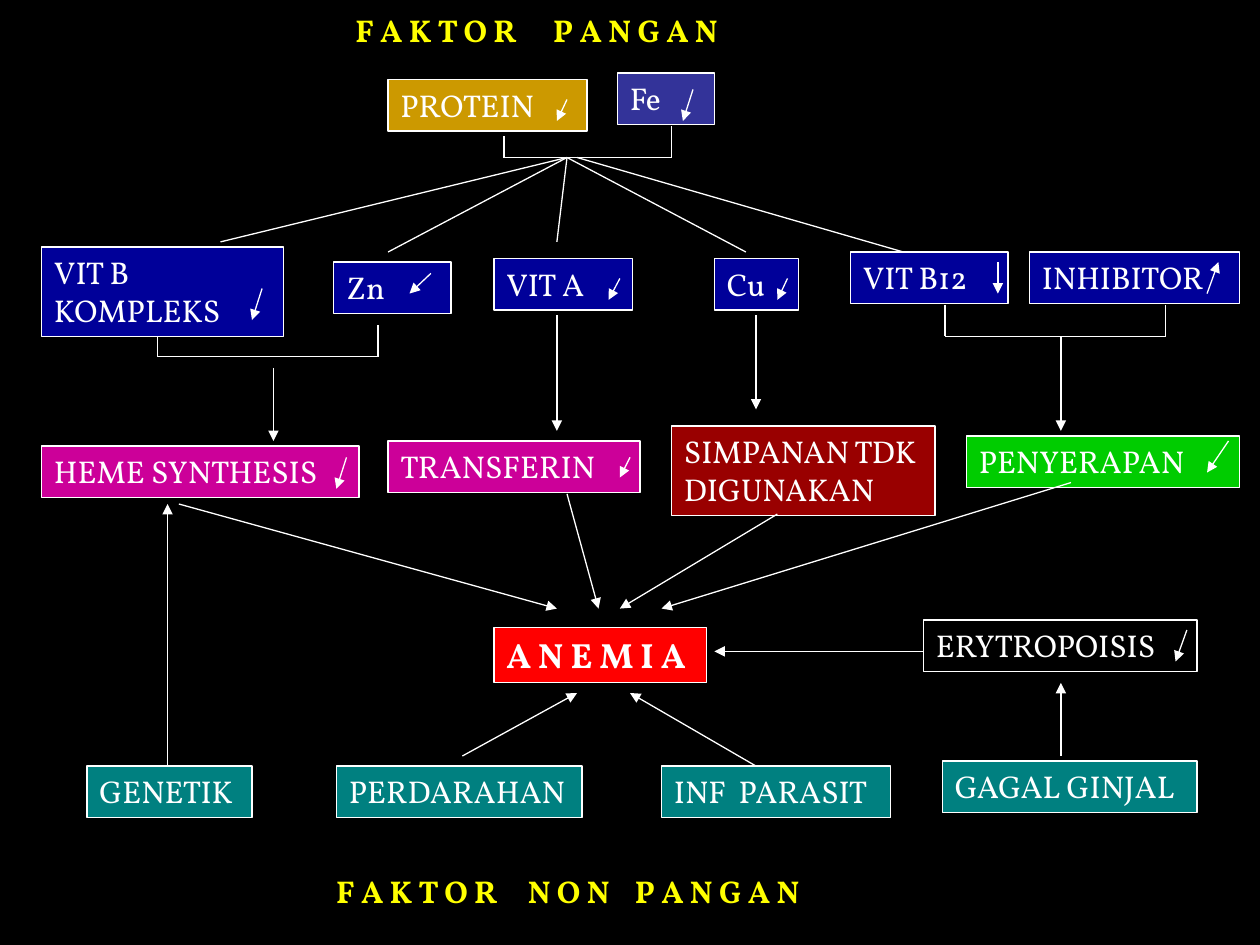
"""Build a slide that charts the dietary and other causes of anemia."""
from dataclasses import dataclass

from lxml import etree
from pptx import Presentation
from pptx.dml.color import RGBColor
from pptx.enum import shapes, text
from pptx.oxml import ns
from pptx.util import Inches, Pt

FONT, WHITE, YELLOW, BLACK = "Vollkorn", "FFFFFF", "FFFF00", "000000"
NAVY, PINK, TEAL = "000099", "CC0099", "008080"


@dataclass
class Box:
    label: str
    left: float
    top: float
    width: float
    fill: str | None
    height: float = 0.41
    wrap: bool = True
    size: int = 18
    bold: bool = False


@dataclass
class Line:
    x1: float
    y1: float
    x2: float
    y2: float
    head: bool = True


@dataclass
class Fork:
    left: float
    top1: float
    right: float
    top2: float
    base: float


BOXES = [
    Box("PROTEIN", 3.08, 0.63, 1.58, "CC9900"),
    Box("Fe", 4.9, 0.58, 0.77, "333399"),
    Box("VIT B KOMPLEKS", 0.33, 1.96, 1.92, NAVY, 0.71),
    Box("Zn", 2.65, 2.08, 0.93, NAVY),
    Box("VIT A", 3.92, 2.05, 1.1, NAVY),
    Box("Cu", 5.67, 2.05, 0.67, NAVY, wrap=False),
    Box("VIT B12", 6.75, 2, 1.25, NAVY),
    Box("INHIBITOR", 8.17, 2, 1.67, NAVY),
    Box("HEME SYNTHESIS", 0.33, 3.54, 2.52, PINK),
    Box("TRANSFERIN", 3.08, 3.5, 2, PINK),
    Box("SIMPANAN TDK\nDIGUNAKAN", 5.33, 3.38, 2.09, "990000", 0.71, False),
    Box("PENYERAPAN", 7.67, 3.46, 2.17, "00CC00"),
    Box("A N E M I A", 3.92, 4.98, 1.69, "FF0000", 0.44, False, 20, True),
    Box("ERYTROPOISIS", 7.33, 4.92, 2.17, None),
    Box("GENETIK", 0.69, 6.08, 1.31, TEAL, wrap=False),
    Box("PERDARAHAN", 2.67, 6.08, 1.95, TEAL, wrap=False),
    Box("INF  PARASIT", 5.25, 6.08, 1.82, TEAL, wrap=False),
    Box("GAGAL GINJAL", 7.48, 6.04, 2.02, TEAL, wrap=False),
]
TRENDS = [
    Line(4.5, 0.79, 4.42, 0.96), Line(5.5, 0.71, 5.42, 0.96),
    Line(2.08, 2.29, 2, 2.54), Line(3.42, 2.17, 3.25, 2.33),
    Line(4.92, 2.21, 4.83, 2.38), Line(6.25, 2.21, 6.17, 2.38),
    Line(7.92, 2.08, 7.92, 2.33), Line(9.58, 2.33, 9.67, 2.08),
    Line(2.75, 3.63, 2.67, 3.88), Line(5, 3.63, 4.92, 3.79),
    Line(9.75, 3.5, 9.58, 3.75), Line(9.42, 5, 9.33, 5.25),
]
RAYS = [
    Line(4.5, 1.25, 1.75, 1.92, False), Line(4.5, 1.25, 3.08, 2, False),
    Line(4.5, 1.25, 4.42, 1.92, False), Line(4.5, 1.25, 5.92, 2, False),
    Line(4.58, 1.25, 7.17, 2, False),
]
FLOWS = [
    Line(2.17, 2.92, 2.17, 3.5), Line(4.42, 2.5, 4.42, 3.42),
    Line(6, 2.5, 6, 3.25), Line(8.42, 2.67, 8.42, 3.42),
    Line(1.42, 4, 4.42, 4.83), Line(4.5, 3.92, 4.75, 4.83),
    Line(6.17, 4.08, 4.92, 4.83), Line(8.5, 3.83, 5.25, 4.83),
    Line(1.33, 6.08, 1.33, 4), Line(3.67, 6, 4.58, 5.5),
    Line(6, 6.08, 5, 5.5), Line(8.42, 6, 8.42, 5.42),
    Line(7.33, 5.17, 5.67, 5.17),
]
FORKS = [
    Fork(4, 1.08, 5.33, 1, 1.25),
    Fork(1.25, 2.67, 3, 2.58, 2.83),
    Fork(7.5, 2.42, 9.25, 2.42, 2.67),
]


def paint(form, color: str) -> None:
    form.solid()
    form.fore_color.rgb = RGBColor.from_string(color)


def write(shape, label: str, color: str, size: int, bold: bool, wrap: bool) -> None:
    frame = shape.text_frame
    frame.text = label
    frame.word_wrap = wrap
    frame.auto_size = text.MSO_AUTO_SIZE.SHAPE_TO_FIT_TEXT
    frame.vertical_anchor = text.MSO_ANCHOR.TOP
    for par in frame.paragraphs:
        par.alignment = text.PP_ALIGN.LEFT
        for run in par.runs:
            run.font.name, run.font.size, run.font.bold = FONT, Pt(size), bold
            paint(run.font.fill, color)


def add_box(slide, box: Box) -> None:
    shape = slide.shapes.add_shape(
        shapes.MSO_SHAPE.RECTANGLE, Inches(box.left), Inches(box.top),
        Inches(box.width), Inches(box.height))
    shape.shadow.inherit = False
    if box.fill:
        paint(shape.fill, box.fill)
    else:
        shape.fill.background()
    paint(shape.line.fill, WHITE)
    shape.line.width = Pt(0.75)
    write(shape, box.label, WHITE, box.size, box.bold, box.wrap)


def add_line(slide, line: Line) -> None:
    link = slide.shapes.add_connector(
        shapes.MSO_CONNECTOR.STRAIGHT, Inches(line.x1), Inches(line.y1),
        Inches(line.x2), Inches(line.y2))
    paint(link.line.fill, WHITE)
    link.line.width = Pt(0.75)
    if line.head:
        etree.SubElement(link.line._get_or_add_ln(), ns.qn("a:tailEnd"), type="triangle")
    etree.SubElement(link._element.spPr, ns.qn("a:effectLst"))


def add_fork(slide, fork: Fork) -> None:
    add_line(slide, Line(fork.left, fork.top1, fork.left, fork.base, False))
    add_line(slide, Line(fork.left, fork.base, fork.right, fork.base, False))
    add_line(slide, Line(fork.right, fork.base, fork.right, fork.top2, False))


def main() -> None:
    deck = Presentation()
    deck.slide_width, deck.slide_height = Inches(10), Inches(7.5)
    slide = deck.slides.add_slide(deck.slide_layouts[5])
    paint(slide.background.fill, BLACK)
    for box in BOXES:
        add_box(slide, box)
    for fork in FORKS:
        add_fork(slide, fork)
    for line in TRENDS + RAYS + FLOWS:
        add_line(slide, line)
    title = slide.shapes.title
    title.left, title.top = Inches(2.72), Inches(0.04)
    title.width, title.height = Inches(3.51), Inches(0.4)
    write(title, "F A K T O R      P A N G A N", YELLOW, 18, True, False)
    foot = slide.shapes.add_textbox(Inches(2.57), Inches(6.87), Inches(4.34), Inches(0.4))
    write(foot, "F A K T O R     N O N    P A N G A N", YELLOW, 18, True, False)
    deck.save("out.pptx")


if __name__ == "__main__":
    main()
